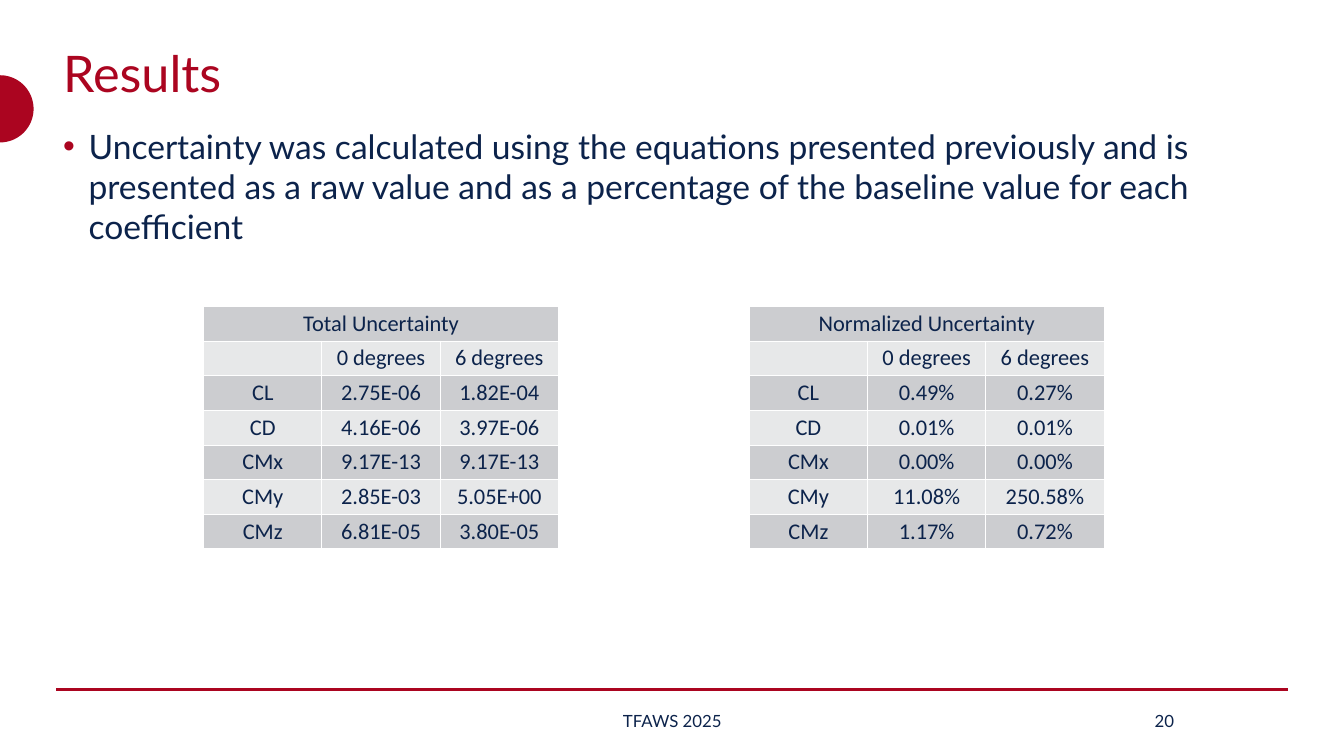
"""Build the Results slide with its two uncertainty tables."""
import math

import pptx
import pptx.dml.color
import pptx.enum.shapes
import pptx.enum.text
import pptx.oxml
import pptx.oxml.ns
import pptx.util
from pptx.util import Inches

ALIGN = pptx.enum.text.PP_ALIGN
ANCHOR = pptx.enum.text.MSO_ANCHOR

THEME = {
    "red": "AB0520", "navy": "0C234B", "white": "FFFFFF",
    "bands": ("CCCDD0", "E7E8E9"),
    "font": "Lato", "table_font": "Calibri",
    "title": 54, "body": 36, "table": 24, "footer": 18,
}

TITLE = "Results"
BULLET = ("Uncertainty was calculated using the equations presented previously and is "
          "presented as a raw value and as a percentage of the baseline value for each coefficient")
FOOTER = "TFAWS 2025"
PAGE = "20"
HEADS = ("", "0 degrees", "6 degrees")
TABLES = [
    {"name": "Total Uncertainty", "left": 3.03, "rows": [
        ("CL", "2.75E-06", "1.82E-04"),
        ("CD", "4.16E-06", "3.97E-06"),
        ("CMx", "9.17E-13", "9.17E-13"),
        ("CMy", "2.85E-03", "5.05E+00"),
        ("CMz", "6.81E-05", "3.80E-05")]},
    {"name": "Normalized Uncertainty", "left": 11.15, "rows": [
        ("CL", "0.49%", "0.27%"),
        ("CD", "0.01%", "0.01%"),
        ("CMx", "0.00%", "0.00%"),
        ("CMy", "11.08%", "250.58%"),
        ("CMz", "1.17%", "0.72%")]},
]
TABLE_TOP, TABLE_WIDTH, TABLE_HEIGHT = 4.56, 5.28, 3.61
MARGIN, SLIDE_WIDTH, SLIDE_HEIGHT = 0.84, 20, 11.25
CONTENT_WIDTH = SLIDE_WIDTH - 2 * MARGIN


def rgb(color):
    """Turn a hex string into a colour."""
    return pptx.dml.color.RGBColor.from_string(color)


def add_run(p, text, size, color=THEME["navy"], font=THEME["font"]):
    """Add one styled run to a paragraph."""
    r = p.add_run()
    r.text = text
    r.font.size = pptx.util.Pt(size)
    r.font.name = font
    r.font.color.rgb = rgb(color)


def add_text_box(s, box, anchor, align):
    """Add a wrapping text box and return its first paragraph."""
    tf = s.shapes.add_textbox(*map(Inches, box)).text_frame
    tf.word_wrap = True
    tf.vertical_anchor = anchor
    p = tf.paragraphs[0]
    p.alignment = align
    return p


def add_bullet(p):
    """Give a paragraph a hanging coloured bullet."""
    ppr = p._p.get_or_add_pPr()
    ppr.set("marL", str(Inches(0.38)))
    ppr.set("indent", str(Inches(-0.38)))
    ns = pptx.oxml.ns.nsdecls("a")
    for xml in (f'<a:buClr {ns}><a:srgbClr val="{THEME["red"]}"/></a:buClr>',
                f'<a:buFont {ns} typeface="Arial"/>',
                f'<a:buChar {ns} char="•"/>'):
        ppr.append(pptx.oxml.parse_xml(xml))


def add_half_disc(s, center_y, radius, steps=48):
    """Draw the half disc on the left edge of the slide."""
    angles = [math.pi * (i / steps - 0.5) for i in range(steps + 1)]
    points = [(Inches(radius * math.cos(a)), Inches(center_y + radius * math.sin(a)))
              for a in angles]
    builder = s.shapes.build_freeform(*points[0])
    builder.add_line_segments(points[1:], close=True)
    sp = builder.convert_to_shape()
    sp.shadow.inherit = False
    sp.fill.solid()
    sp.fill.fore_color.rgb = rgb(THEME["red"])
    sp.line.fill.background()


def add_rule(s, y):
    """Draw the line above the footer."""
    line = s.shapes.add_connector(
        pptx.enum.shapes.MSO_CONNECTOR.STRAIGHT,
        Inches(MARGIN), Inches(y), Inches(SLIDE_WIDTH - MARGIN), Inches(y))
    line.line.color.rgb = rgb(THEME["red"])
    line.line.width = pptx.util.Pt(3)
    line._element.spPr.append(
        pptx.oxml.parse_xml(f'<a:effectLst {pptx.oxml.ns.nsdecls("a")}/>'))


def style_cell(cell, fill):
    """Set margins, borders and fill of a cell."""
    cell.margin_left = cell.margin_right = cell.margin_top = cell.margin_bottom = 0
    cell.vertical_anchor = ANCHOR.MIDDLE
    for side in "LRTB":
        cell._tc.get_or_add_tcPr().append(pptx.oxml.parse_xml(
            f'<a:ln{side} {pptx.oxml.ns.nsdecls("a")} w="12700"><a:solidFill>'
            f'<a:srgbClr val="{THEME["white"]}"/></a:solidFill></a:ln{side}>'))
    cell.fill.solid()
    cell.fill.fore_color.rgb = rgb(fill)


def add_uncertainty_table(s, name, left, rows):
    """Add a banded table under a merged heading."""
    grid = [(name, "", ""), HEADS, *rows]
    table = s.shapes.add_table(
        len(grid), len(HEADS), Inches(left), Inches(TABLE_TOP),
        Inches(TABLE_WIDTH), Inches(TABLE_HEIGHT)).table
    table.first_row = table.horz_banding = False
    for i, values in enumerate(grid):
        for j, text in enumerate(values):
            cell = table.cell(i, j)
            style_cell(cell, THEME["bands"][i % 2])
            if text:
                p = cell.text_frame.paragraphs[0]
                p.alignment = ALIGN.CENTER
                add_run(p, text, THEME["table"], font=THEME["table_font"])
    table.cell(0, 0).merge(table.cell(0, len(HEADS) - 1))


def main():
    """Assemble and save the slide."""
    prs = pptx.Presentation()
    prs.slide_width, prs.slide_height = Inches(SLIDE_WIDTH), Inches(SLIDE_HEIGHT)
    s = prs.slides.add_slide(prs.slide_layouts[6])
    add_half_disc(s, 1.62, 0.5)
    add_rule(s, 10.26)

    p = add_text_box(s, (MARGIN, 0.6, CONTENT_WIDTH, 1.06), ANCHOR.MIDDLE, ALIGN.LEFT)
    p.line_spacing = 0.9
    add_run(p, TITLE, THEME["title"], THEME["red"])

    p = add_text_box(s, (MARGIN, 1.82, CONTENT_WIDTH, 8.4), ANCHOR.TOP, ALIGN.LEFT)
    add_bullet(p)
    p.space_after = pptx.util.Pt(9)
    add_run(p, BULLET, THEME["body"])

    for text, left, width, align in ((FOOTER, 4.09, 11.83, ALIGN.CENTER),
                                     (PAGE, 16.31, 1.26, ALIGN.RIGHT)):
        p = add_text_box(s, (left, 10.43, width, 0.6), ANCHOR.MIDDLE, align)
        add_run(p, text, THEME["footer"])

    for table in TABLES:
        add_uncertainty_table(s, **table)
    prs.save("out.pptx")


if __name__ == "__main__":
    main()
